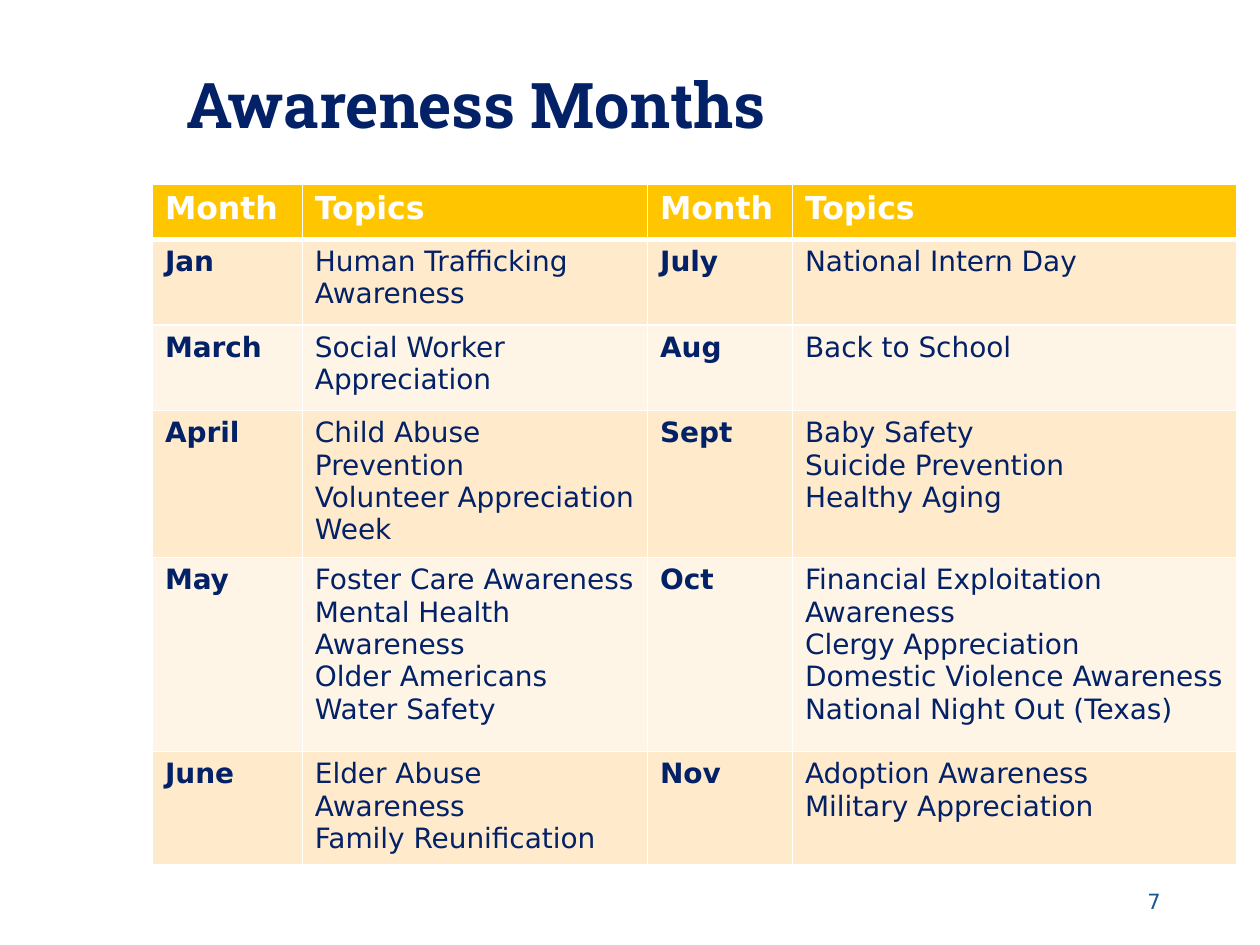
from lxml import etree
from pptx import Presentation
from pptx.dml.color import RGBColor
from pptx.enum.text import MSO_ANCHOR, PP_ALIGN
from pptx.oxml.ns import qn
from pptx.util import Inches, Pt

NAVY = RGBColor(0x02, 0x21, 0x67)
BLUE = RGBColor(0x1A, 0x57, 0x8E)
WHITE = RGBColor(0xFF, 0xFF, 0xFF)
GOLD = RGBColor(0xFF, 0xC6, 0x00)
PEACH = RGBColor(0xFF, 0xEA, 0xCC)
CREAM = RGBColor(0xFF, 0xF5, 0xE7)
BODY_FONT = "DejaVu Sans"

# Each cell holds one paragraph per line
ROWS = [
    ["Month", "Topics", "Month", "Topics"],
    ["Jan", "Human Trafficking Awareness", "July", "National Intern Day"],
    ["March", "Social Worker Appreciation", "Aug", "Back to School"],
    ["April", "Child Abuse Prevention\nVolunteer Appreciation Week",
     "Sept", "Baby Safety\nSuicide Prevention\nHealthy Aging"],
    ["May", "Foster Care Awareness\nMental Health Awareness\nOlder Americans\nWater Safety",
     "Oct", "Financial Exploitation Awareness\nClergy Appreciation\n"
            "Domestic Violence Awareness\nNational Night Out (Texas)"],
    ["June", "Elder Abuse Awareness\nFamily Reunification",
     "Nov", "Adoption Awareness\nMilitary Appreciation"],
]
COLUMN_WIDTHS = [1.19, 2.74, 1.15, 3.53]
ROW_HEIGHTS = [0.44, 0.68, 0.68, 0.97, 1.54, 0.68]


def format_text(text_frame, font_name, size, color, bold=False):
    for paragraph in text_frame.paragraphs:
        for run in paragraph.runs:
            run.font.name = font_name
            run.font.size = Pt(size)
            run.font.color.rgb = color
            run.font.bold = bold


def add_border(cell, side, width):
    properties = cell._tc.get_or_add_tcPr()
    line = etree.SubElement(properties, qn(f"a:ln{side}"), w=str(Pt(width)))
    fill = etree.SubElement(line, qn("a:solidFill"))
    etree.SubElement(fill, qn("a:srgbClr"), val=str(WHITE))


presentation = Presentation()
presentation.slide_width = Inches(10)
presentation.slide_height = Inches(7.5)
slide = presentation.slides.add_slide(presentation.slide_layouts[6])

# Title
title = slide.shapes.add_textbox(Inches(1.38), Inches(0.54), Inches(7.93), Inches(0.8))
title.text_frame.word_wrap = True
title.text_frame.text = "Awareness Months"
title.text_frame.paragraphs[0].line_spacing = 0.9
format_text(title.text_frame, "Roboto Slab", 36, NAVY, bold=True)

# Slide number
number = slide.shapes.add_textbox(Inches(8), Inches(6.95), Inches(1.31), Inches(0.4))
number.text_frame.word_wrap = True
number.text_frame.vertical_anchor = MSO_ANCHOR.MIDDLE
number.text_frame.text = "7"
number.text_frame.paragraphs[0].alignment = PP_ALIGN.RIGHT
format_text(number.text_frame, BODY_FONT, 12, BLUE)

# Table of months and topics
table = slide.shapes.add_table(
    len(ROWS), len(COLUMN_WIDTHS), Inches(1.21), Inches(1.46),
    Inches(sum(COLUMN_WIDTHS)), Inches(sum(ROW_HEIGHTS))).table
for column, width in zip(table.columns, COLUMN_WIDTHS):
    column.width = Inches(width)
for row, height in zip(table.rows, ROW_HEIGHTS):
    row.height = Inches(height)

for row_index, row_texts in enumerate(ROWS):
    is_header = row_index == 0
    band = GOLD if is_header else PEACH if row_index % 2 else CREAM
    for column_index, text in enumerate(row_texts):
        cell = table.cell(row_index, column_index)
        for side in "LRTB":
            heavy = (is_header and side == "B") or (row_index == 1 and side == "T")
            add_border(cell, side, 3 if heavy else 1)
        cell.fill.solid()
        cell.fill.fore_color.rgb = band
        cell.text_frame.text = text
        format_text(cell.text_frame, BODY_FONT, 18 if is_header else 16,
                    WHITE if is_header else NAVY,
                    bold=is_header or column_index % 2 == 0)

presentation.save("out.pptx")
